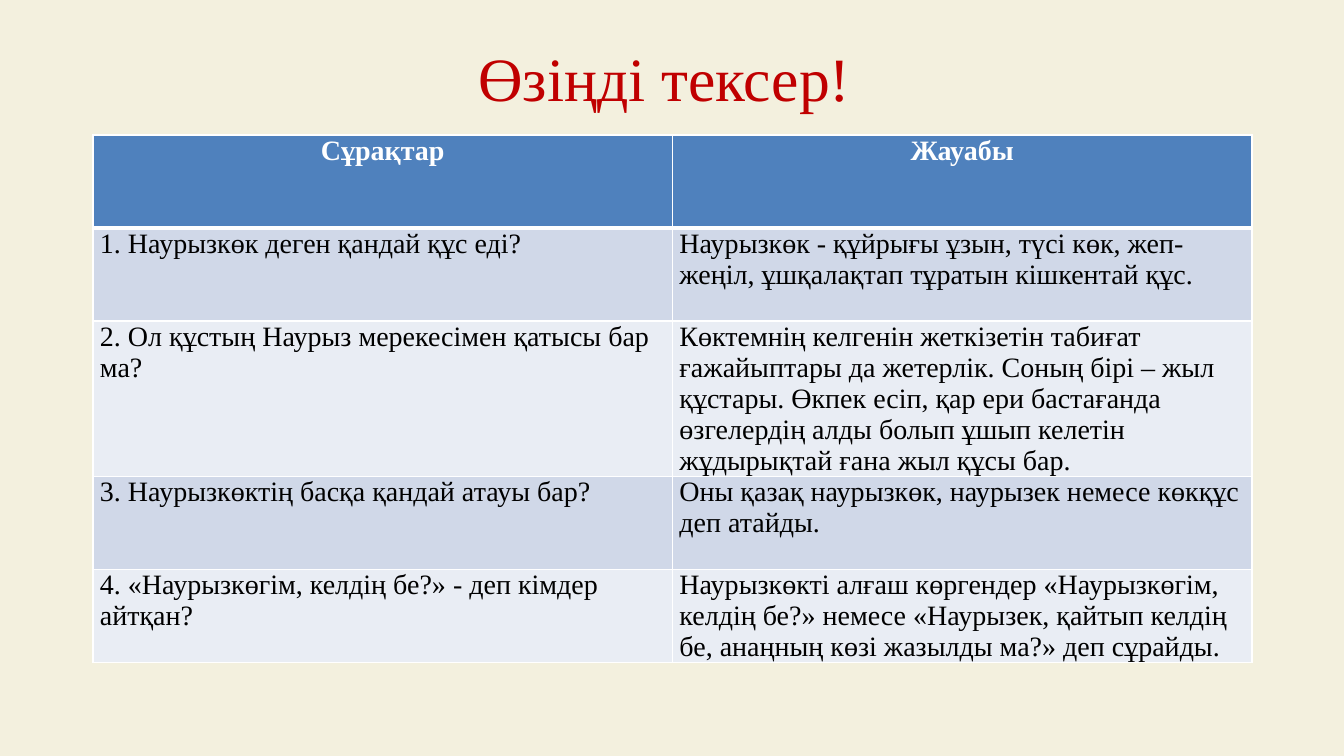
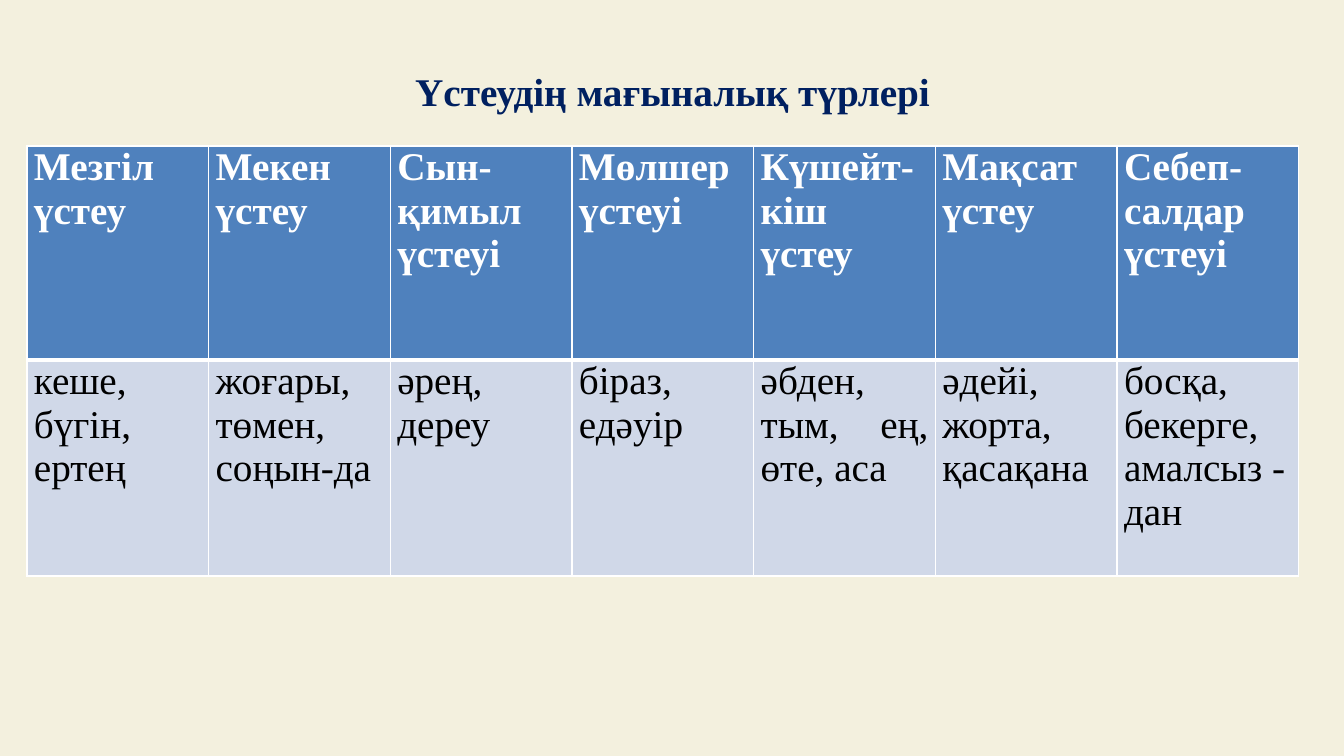
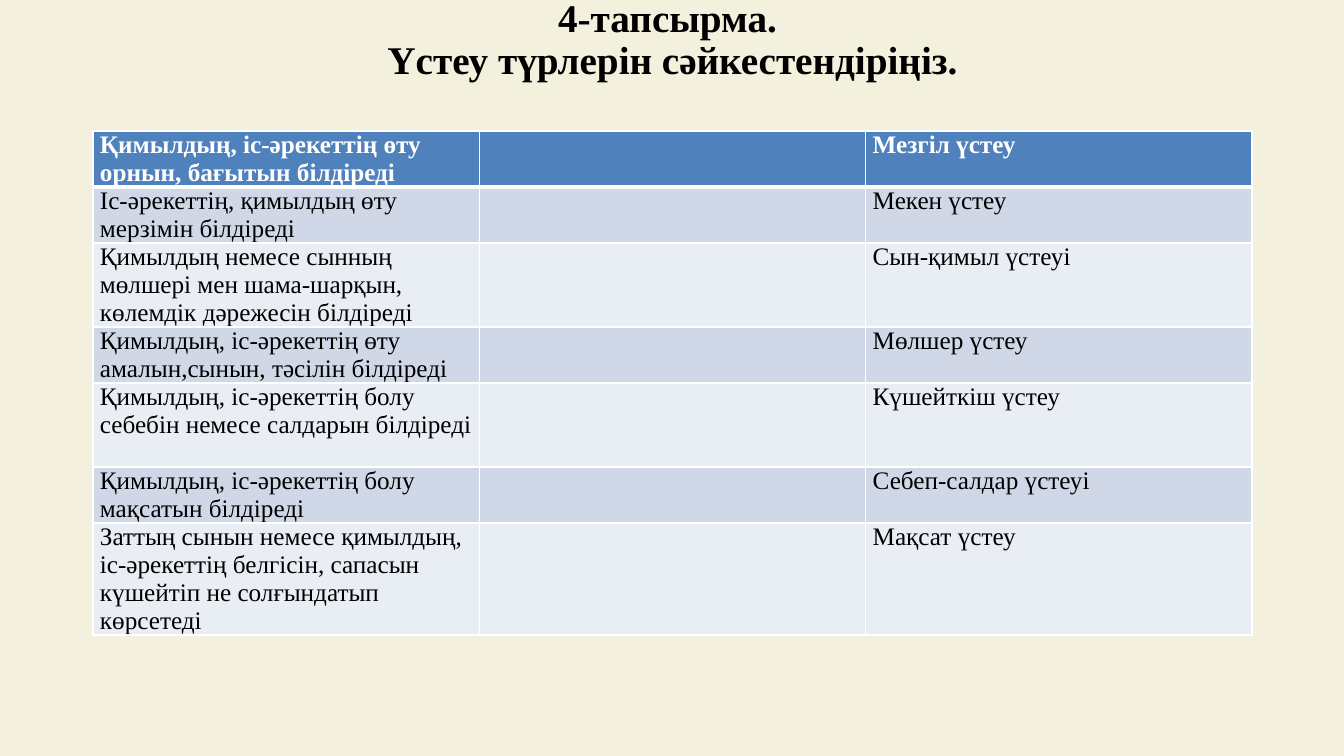
import pptx
import pptx.util
import pptx.dml.color
import pptx.enum.text
import pptx.oxml.ns
import lxml.etree

PX = 914400 / 100.8
FONT = "Times New Roman"
COLORS = {
    "paper": "F3F0DE", "header": "4F81BD", "odd": "D0D8E8", "even": "E9EDF4",
    "white": "FFFFFF", "black": "000000", "red": "C00000", "navy": "002060",
}
ALIGN = pptx.enum.text.PP_ALIGN
TITLE_LEFT, TITLE_WIDTH = 93, 1159
CELL_INSET = 7

slides = [
    dict(
        title="Өзіңді тексер! ", title_top=50, title_height=64, title_size=44,
        title_color="red", title_bold=False,
        left=93, top=135, cols=[579.5] * 2, rows=[93, 93, 155, 93, 93],
        size=20, header_align=ALIGN.CENTER, body_align=ALIGN.LEFT,
        cells=[
            ["Сұрақтар", "Жауабы"],
            ["1. Наурызкөк деген қандай құс еді?",
             "Наурызкөк - құйрығы ұзын, түсі көк, жеп-жеңіл, ұшқалақтап тұратын кішкентай құс."],
            ["2. Ол құстың Наурыз мерекесімен қатысы бар ма?",
             "Көктемнің келгенін жеткізетін табиғат ғажайыптары да жетерлік. "
             "Соның бірі – жыл құстары. Өкпек есіп, қар ери бастағанда өзгелердің "
             "алды болып ұшып келетін жұдырықтай ғана жыл құсы бар."],
            ["3. Наурызкөктің басқа қандай атауы бар?",
             "Оны қазақ наурызкөк, наурызек немесе көкқұс деп атайды."],
            ["4. «Наурызкөгім, келдің бе?» - деп кімдер айтқан?",
             "Наурызкөкті алғаш көргендер «Наурызкөгім, келдің бе?» немесе "
             "«Наурызек, қайтып келдің бе, анаңның көзі жазылды ма?» деп сұрайды."],
        ],
    ),
    dict(
        title="Үстеудің мағыналық түрлері", title_top=73, title_height=41, title_size=28,
        title_color="navy", title_bold=True,
        left=27, top=146, cols=[181.7] * 7, rows=[214, 216],
        size=28, header_align=ALIGN.JUSTIFY, body_align=ALIGN.JUSTIFY,
        cells=[
            ["Мезгіл үстеу", "Мекен үстеу", "Сын-қимыл үстеуі", "Мөлшер үстеуі",
             "Күшейт-\nкіш үстеу", "Мақсат үстеу", "Себеп-салдар үстеуі"],
            ["кеше, бүгін, ертең", "жоғары, төмен, соңын-да", "әрең, дереу",
             "біраз, едәуір", "әбден, тым, ең, өте, аса", "әдейі, жорта, қасақана",
             "босқа, бекерге, амалсыз -\nдан"],
        ],
    ),
    dict(
        title="4-тапсырма. \nҮстеу түрлерін сәйкестендіріңіз.",
        title_top=0, title_height=82, title_size=28,
        title_color="black", title_bold=True,
        left=93, top=131, cols=[386.4] * 3,
        rows=[28 * lines for lines in (2, 2, 3, 2, 3, 2, 4)],
        size=18, header_align=ALIGN.LEFT, body_align=ALIGN.LEFT,
        cells=[
            ["Қимылдың, іс-әрекеттің өту орнын, бағытын білдіреді", "", "Мезгіл үстеу"],
            ["Іс-әрекеттің, қимылдың өту мерзімін білдіреді", "", "Мекен үстеу"],
            ["Қимылдың немесе сынның мөлшері мен шама-шарқын, көлемдік дәрежесін білдіреді",
             "", "Сын-қимыл үстеуі"],
            ["Қимылдың, іс-әрекеттің өту амалын,сынын, тәсілін білдіреді", "", "Мөлшер үстеу"],
            ["Қимылдың, іс-әрекеттің болу себебін немесе салдарын білдіреді",
             "", "Күшейткіш үстеу"],
            ["Қимылдың, іс-әрекеттің болу мақсатын білдіреді", "", "Себеп-салдар үстеуі"],
            ["Заттың сынын немесе қимылдың, іс-әрекеттің белгісін, сапасын күшейтіп "
             "не солғындатып көрсетеді", "", "Мақсат үстеу"],
        ],
    ),
]


def write(tf, text, *, size, color, bold=False, align=ALIGN.LEFT, spacing=1.0):
    """Fill a text frame, one paragraph for each line of text."""
    for i, line in enumerate(text.split("\n")):
        p = tf.add_paragraph() if i else tf.paragraphs[0]
        p.alignment = align
        p.line_spacing = spacing
        p.space_before = pptx.util.Pt(0)
        if line:
            r = p.add_run()
            r.text = line
            r.font.name = FONT
            r.font.size = pptx.util.Pt(size)
            r.font.bold = bold
            r.font.color.rgb = pptx.dml.color.RGBColor.from_string(COLORS[color])


def set_borders(cell, **widths):
    """Draw white cell borders; widths are points by side: L, R, T, B."""
    qn = pptx.oxml.ns.qn
    tcPr = cell._tc.get_or_add_tcPr()
    for i, side in enumerate("LRTB"):
        ln = lxml.etree.Element(qn("a:ln" + side), w=str(pptx.util.Pt(widths.get(side, 1))))
        fill = lxml.etree.SubElement(ln, qn("a:solidFill"))
        lxml.etree.SubElement(fill, qn("a:srgbClr"), val=COLORS["white"])
        tcPr.insert(i, ln)


prs = pptx.Presentation()
prs.slide_width, prs.slide_height = int(1344 * PX), int(756 * PX)
background = prs.slide_master.background.fill
background.solid()
background.fore_color.rgb = pptx.dml.color.RGBColor.from_string(COLORS["paper"])

for d in slides:
    s = prs.slides.add_slide(prs.slide_layouts[5])

    title = s.shapes.title
    title.left, title.top = int(TITLE_LEFT * PX), int(d["title_top"] * PX)
    title.width, title.height = int(TITLE_WIDTH * PX), int(d["title_height"] * PX)
    tf = title.text_frame
    tf.word_wrap = True
    tf.auto_size = pptx.enum.text.MSO_AUTO_SIZE.NONE
    tf.vertical_anchor = pptx.enum.text.MSO_ANCHOR.MIDDLE
    tf.margin_top = tf.margin_bottom = 0
    write(tf, d["title"], size=d["title_size"], color=d["title_color"],
          bold=d["title_bold"], align=ALIGN.CENTER, spacing=0.9)

    table = s.shapes.add_table(
        len(d["rows"]), len(d["cols"]), int(d["left"] * PX), int(d["top"] * PX),
        int(sum(d["cols"]) * PX), int(sum(d["rows"]) * PX)).table
    table.horz_banding = False
    for col, width in zip(table.columns, d["cols"]):
        col.width = int(width * PX)
    for row, height in zip(table.rows, d["rows"]):
        row.height = int(height * PX)

    for i, texts in enumerate(d["cells"]):
        header = i == 0
        band = "header" if header else "odd" if i % 2 else "even"
        for j, text in enumerate(texts):
            cell = table.cell(i, j)
            cell.margin_left = cell.margin_right = int(CELL_INSET * PX)
            cell.margin_top = cell.margin_bottom = 0
            cell.fill.solid()
            cell.fill.fore_color.rgb = pptx.dml.color.RGBColor.from_string(COLORS[band])
            set_borders(cell, T=3 if i == 1 else 1, B=3 if header else 1)
            split_header = header and "\n" in text
            align = d["header_align"] if header else d["body_align"]
            write(cell.text_frame, text, size=d["size"],
                  color="white" if header else "black", bold=header,
                  align=ALIGN.LEFT if split_header else align)

prs.save("out.pptx")
